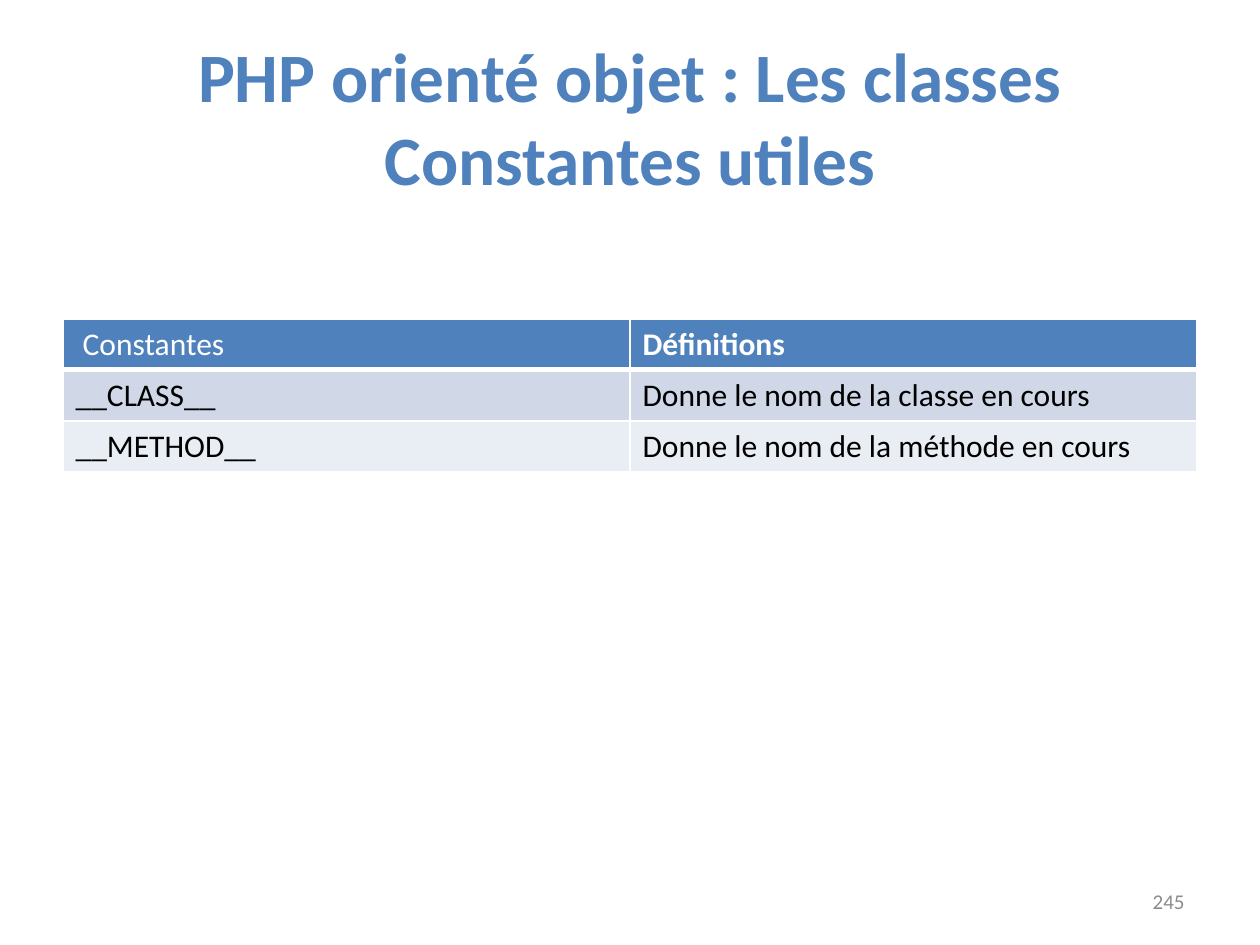
from dataclasses import dataclass

import pptx
import pptx.dml.color
import pptx.enum.text
import pptx.oxml
import pptx.oxml.ns
import pptx.util
from pptx.util import Inches

Align = pptx.enum.text.PP_ALIGN
Anchor = pptx.enum.text.MSO_ANCHOR


@dataclass(frozen=True)
class Theme:
    font: str = "Calibri"
    accent: str = "4F81BD"
    white: str = "FFFFFF"
    black: str = "000000"
    muted: str = "8C8C8C"
    bands: tuple = ("D0D8E8", "E9EDF4")
    title_size: float = 39.6
    table_size: float = 18
    number_size: float = 12
    thin_rule: float = 1
    header_rule: float = 3


THEME = Theme()

CONSTANTS = [
    (" Constantes", "Définitions"),
    ("__CLASS__", "Donne le nom de la classe en cours"),
    ("__METHOD__", "Donne le nom de la méthode en cours"),
]


def rgb(color):
    return pptx.dml.color.RGBColor.from_string(color)


def style_paragraph(paragraph, size, color, bold=False, align=Align.LEFT):
    paragraph.alignment = align
    font = paragraph.font
    font.name = THEME.font
    font.size = pptx.util.Pt(size)
    font.bold = bold
    font.color.rgb = rgb(color)


def add_text(page, text, left, top, width, height, **style):
    """Add a vertically centred text box; a vertical tab breaks the line."""
    box = page.shapes.add_textbox(Inches(left), Inches(top), Inches(width), Inches(height))
    frame = box.text_frame
    frame.word_wrap = True
    frame.vertical_anchor = Anchor.MIDDLE
    paragraph = frame.paragraphs[0]
    paragraph.text = text
    style_paragraph(paragraph, **style)


def set_borders(cell, top, bottom):
    """Draw white rules; top and bottom are widths in points."""
    properties = cell._tc.get_or_add_tcPr()
    widths = {"L": THEME.thin_rule, "R": THEME.thin_rule, "T": top, "B": bottom}
    for position, (side, width) in enumerate(widths.items()):
        line = pptx.oxml.parse_xml(
            f'<a:ln{side} {pptx.oxml.ns.nsdecls("a")} w="{pptx.util.Pt(width)}">'
            f'<a:solidFill><a:srgbClr val="{THEME.white}"/></a:solidFill></a:ln{side}>'
        )
        properties.insert(position, line)


def fill_cell(cell, text, row, bold):
    is_header = row == 0
    cell.text = text
    style_paragraph(
        cell.text_frame.paragraphs[0],
        size=THEME.table_size,
        color=THEME.white if is_header else THEME.black,
        bold=bold,
    )
    cell.fill.solid()
    cell.fill.fore_color.rgb = rgb(THEME.accent if is_header else THEME.bands[(row - 1) % 2])
    set_borders(
        cell,
        top=THEME.header_rule if row == 1 else THEME.thin_rule,
        bottom=THEME.header_rule if is_header else THEME.thin_rule,
    )


def add_constants_table(page, rows, left, top, width, row_height):
    frame = page.shapes.add_table(
        len(rows), len(rows[0]), Inches(left), Inches(top),
        Inches(width), Inches(row_height * len(rows)),
    )
    for row, texts in enumerate(rows):
        for column, text in enumerate(texts):
            is_bold = row == 0 and column == 1
            fill_cell(frame.table.cell(row, column), text, row, is_bold)


def main():
    deck = pptx.Presentation()
    deck.slide_width, deck.slide_height = Inches(10), Inches(7.5)
    page = deck.slides.add_slide(deck.slide_layouts[6])

    add_text(
        page, "PHP orienté objet : Les classes\vConstantes utiles", 0.5, 0.3, 9, 1.25,
        size=THEME.title_size, color=THEME.accent, bold=True, align=Align.CENTER,
    )
    add_constants_table(page, CONSTANTS, left=0.5, top=2.53, width=9, row_height=0.405)
    add_text(
        page, "245", 7.17, 6.95, 2.33, 0.4,
        size=THEME.number_size, color=THEME.muted, align=Align.RIGHT,
    )
    deck.save("out.pptx")


if __name__ == "__main__":
    main()
